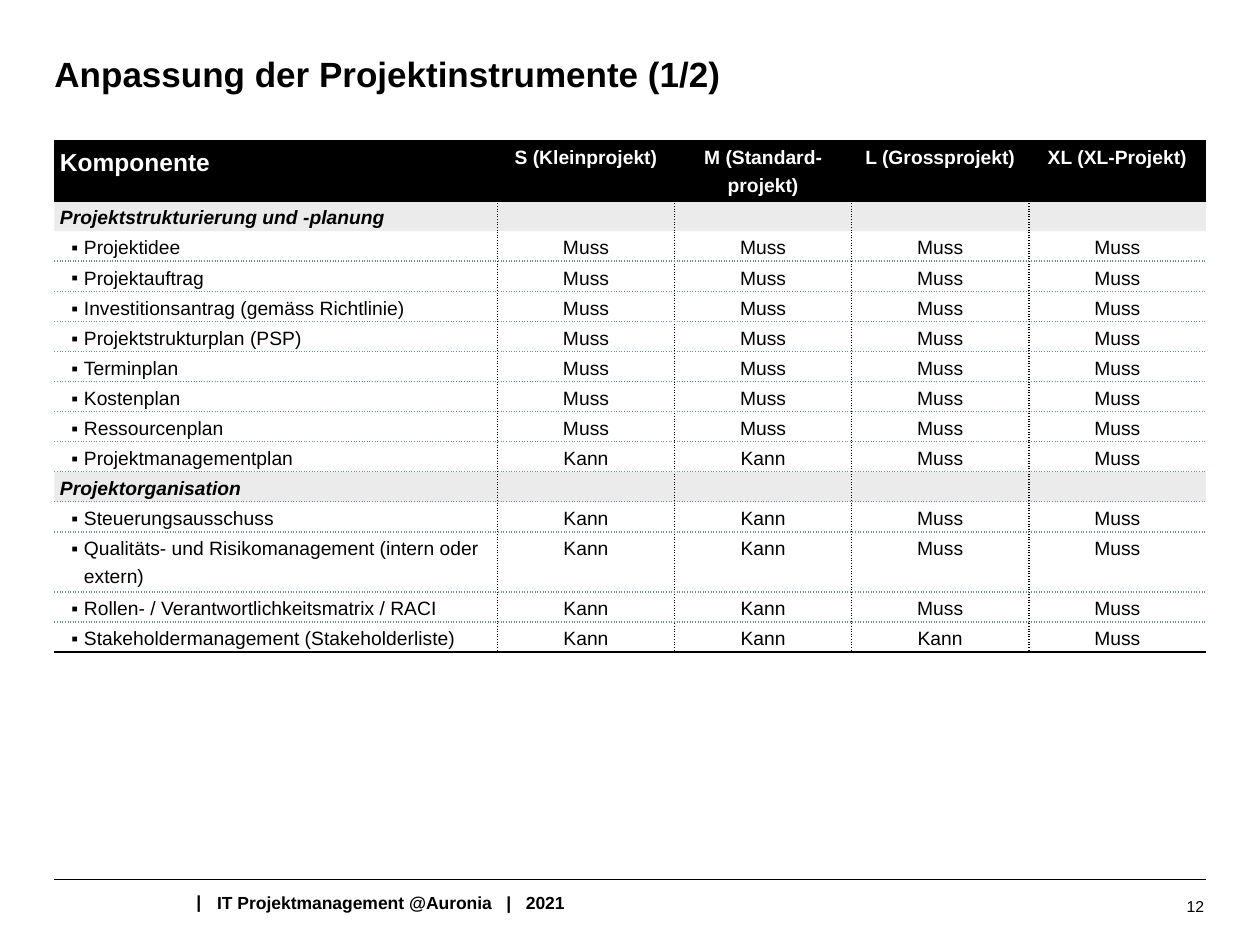
from lxml import etree
from pptx import Presentation
from pptx.dml.color import RGBColor
from pptx.enum.shapes import MSO_CONNECTOR
from pptx.enum.text import MSO_ANCHOR, MSO_AUTO_SIZE, PP_ALIGN
from pptx.oxml.ns import qn
from pptx.util import Pt

LEFT, RIGHT, CENTER, JUSTIFY = PP_ALIGN.LEFT, PP_ALIGN.RIGHT, PP_ALIGN.CENTER, PP_ALIGN.JUSTIFY
TOP, MIDDLE = MSO_ANCHOR.TOP, MSO_ANCHOR.MIDDLE
NO_AUTOFIT = MSO_AUTO_SIZE.NONE
STRAIGHT = MSO_CONNECTOR.STRAIGHT

FONT = "Arial"
BLACK, WHITE, GREY, BLUE = "000000", "FFFFFF", "9D9D9C", "698FA4"
PLAIN_TABLE_STYLE = "{2D5ABB26-0587-4C30-8999-92F81FD0307C}"

SOLID_RULE = (BLACK, "solid", 100)
COLUMN_RULE = (BLACK, "sysDot", 100)
ROW_RULE = (BLUE, "sysDot", 60)

HEADINGS = ["Komponente", "S (Kleinprojekt)", "M (Standard-projekt)",
            "L (Grossprojekt)", "XL (XL-Projekt)"]
ALL_MUSS = ["Muss"] * 4
FROM_L = ["Kann", "Kann", "Muss", "Muss"]
ONLY_XL = ["Kann", "Kann", "Kann", "Muss"]
SECTIONS = [
    ("Projektstrukturierung und -planung", [
        ("Projektidee", ALL_MUSS),
        ("Projektauftrag", ALL_MUSS),
        ("Investitionsantrag (gemäss Richtlinie)", ALL_MUSS),
        ("Projektstrukturplan (PSP)", ALL_MUSS),
        ("Terminplan", ALL_MUSS),
        ("Kostenplan", ALL_MUSS),
        ("Ressourcenplan", ALL_MUSS),
        ("Projektmanagementplan", FROM_L),
    ]),
    ("Projektorganisation", [
        ("Steuerungsausschuss", FROM_L),
        ("Qualitäts- und Risikomanagement (intern oder extern)", FROM_L),
        ("Rollen- / Verantwortlichkeitsmatrix / RACI", FROM_L),
        ("Stakeholdermanagement (Stakeholderliste)", ONLY_XL),
    ]),
]


def rgb(color):
    return RGBColor.from_string(color)


def set_all(target, values):
    for name, value in values.items():
        setattr(target, name, value)


def format_font(font, size, color=BLACK, bold=False, italic=False):
    set_all(font, {"name": FONT, "size": Pt(size), "bold": bold, "italic": italic})
    font.color.rgb = rgb(color)


def add_alpha(color_element, percent):
    etree.SubElement(color_element, qn("a:alpha"), val=str(percent * 1000))


def set_borders(cell, rules):
    properties = cell._tc.get_or_add_tcPr()
    for index, side in enumerate(("lnL", "lnR", "lnT", "lnB")):
        border = etree.Element(qn(f"a:{side}"), w=str(Pt(1)))
        properties.insert(index, border)
        if side not in rules:
            etree.SubElement(border, qn("a:noFill"))
            continue
        color, dash, opacity = rules[side]
        fill = etree.SubElement(border, qn("a:solidFill"))
        add_alpha(etree.SubElement(fill, qn("a:srgbClr"), val=color), opacity)
        etree.SubElement(border, qn("a:prstDash"), val=dash)


def add_bullet(paragraph):
    properties = paragraph._p.get_or_add_pPr()
    properties.set("marL", str(Pt(13.7)))
    properties.set("indent", str(Pt(-7.2)))
    etree.SubElement(properties, qn("a:buFont"), typeface=FONT)
    etree.SubElement(properties, qn("a:buChar"), char="▪")


def fill_cell(cell, text, size=11, align=LEFT, bullet=False, fill=None, opacity=100, **style):
    set_all(cell, {"margin_left": Pt(3.2), "margin_right": Pt(3.2),
                   "margin_top": 0, "margin_bottom": 0, "vertical_anchor": TOP})
    paragraph = cell.text_frame.paragraphs[0]
    set_all(paragraph, {"alignment": align, "line_spacing": 1.3})
    if bullet:
        add_bullet(paragraph)
    if text:
        run = paragraph.add_run()
        run.text = text
        format_font(run.font, size, **style)
    else:
        etree.SubElement(paragraph._p, qn("a:endParaRPr"), sz=str(size * 100))
    if fill:
        cell.fill.solid()
        cell.fill.fore_color.rgb = rgb(fill)
        add_alpha(cell._tc.tcPr.find(f".//{qn('a:srgbClr')}"), opacity)
    else:
        cell.fill.background()


def place_title(slide, left, top, width, height):
    title = slide.shapes.title
    set_all(title, {"left": Pt(left), "top": Pt(top), "width": Pt(width), "height": Pt(height)})
    frame = title.text_frame
    frame.text = "Anpassung der Projektinstrumente (1/2)"
    set_all(frame, {"margin_left": 0, "margin_right": Pt(7.2), "margin_top": Pt(3.6),
                    "margin_bottom": Pt(3.6), "vertical_anchor": TOP,
                    "word_wrap": True, "auto_size": NO_AUTOFIT})
    frame.paragraphs[0].alignment = LEFT
    format_font(frame.paragraphs[0].runs[0].font, 20, bold=True)


def place_instruments(slide, left, top, width):
    rows = [("heading", HEADINGS)]
    for section, components in SECTIONS:
        rows.append(("section", [section] + [""] * 4))
        rows += [("component", [name] + levels) for name, levels in components]
    last_row, last_column = len(rows) - 1, len(HEADINGS) - 1

    heading_height, row_height = 14.4, 10
    height = heading_height + last_row * row_height
    table = slide.shapes.add_table(len(rows), len(HEADINGS),
                                   Pt(left), Pt(top), Pt(width), Pt(height)).table
    set_all(table, {"first_row": False, "horz_banding": False})
    table._tbl.tblPr.find(qn("a:tableStyleId")).text = PLAIN_TABLE_STYLE
    level_width = 101.2
    for index, column in enumerate(table.columns):
        column.width = Pt(level_width if index else width - 4 * level_width)
    for index, row in enumerate(table.rows):
        row.height = Pt(row_height if index else heading_height)

    styles = {"heading": {"color": WHITE, "bold": True, "fill": BLACK},
              "section": {"bold": True, "italic": True, "fill": GREY, "opacity": 20},
              "component": {}}
    for r, (kind, texts) in enumerate(rows):
        below = SOLID_RULE if r in (0, last_row) else None if r == 1 else ROW_RULE
        above = SOLID_RULE if r < 2 else None if r == 2 else ROW_RULE
        for c, text in enumerate(texts):
            style = dict(styles[kind], align=CENTER if c else LEFT)
            if c == 0 and kind == "heading":
                style.update(size=14, align=JUSTIFY)
            fill_cell(table.cell(r, c), text, bullet=c == 0 and kind == "component", **style)
            rules = {"lnT": above, "lnB": below,
                     "lnL": COLUMN_RULE if c else None,
                     "lnR": COLUMN_RULE if c < last_column else None}
            set_borders(table.cell(r, c), {side: rule for side, rule in rules.items() if rule})


def add_label(slide, text, box, size, align=LEFT, anchor=TOP, wrap=False, bold=False):
    frame = slide.shapes.add_textbox(*map(Pt, box)).text_frame
    set_all(frame, {"word_wrap": wrap, "vertical_anchor": anchor})
    paragraph = frame.paragraphs[0]
    paragraph.alignment = align
    run = paragraph.add_run()
    run.text = text
    format_font(run.font, size, bold=bold)


def place_footer(slide, left, top, width):
    rule = slide.shapes.add_connector(STRAIGHT, Pt(left), Pt(top), Pt(left + width), Pt(top))
    rule.line.color.rgb = rgb(BLACK)
    rule.line.width = Pt(0.75)
    etree.SubElement(rule._element.spPr, qn("a:effectLst"))
    add_label(slide, "|", (left + 74, top + 3, 17.3, 19.4), 10, bold=True)
    add_label(slide, "IT Projektmanagement @Auronia   |   2021",
              (left + 85.9, top + 3.6, 214.6, 19.4), 10, bold=True)
    add_label(slide, "12", (left + width - 161.7, top - 2.2, 167.8, 34.6), 9,
              align=RIGHT, anchor=MIDDLE, wrap=True)


def main():
    presentation = Presentation()
    set_all(presentation, {"slide_width": Pt(720), "slide_height": Pt(540)})
    slide = presentation.slides.add_slide(presentation.slide_layouts[5])
    left, width = 31.1, 658
    place_footer(slide, left, 502.6, width)
    place_title(slide, left, 26.6, width, 28)
    place_instruments(slide, left, 80.6, width)
    presentation.save("out.pptx")


if __name__ == "__main__":
    main()
